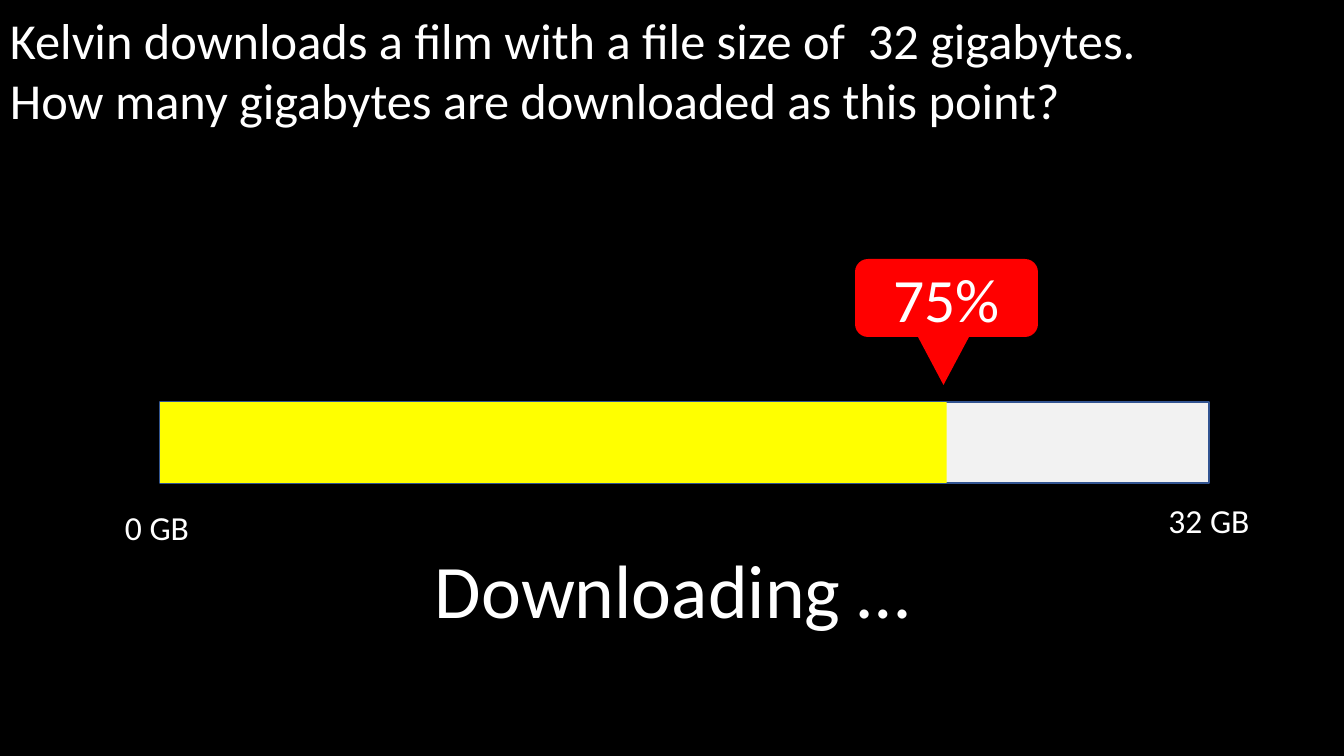
from pptx import Presentation
from pptx.dml.color import RGBColor
from pptx.enum.shapes import MSO_SHAPE as Kind
from pptx.enum.text import MSO_ANCHOR as Anchor, MSO_AUTO_SIZE as Fit, PP_ALIGN as Align
from pptx.util import Emu, Pt

WIDTH, HEIGHT = 1344, 756
SCALE = 12192000 / WIDTH
BLACK, WHITE, RED = "000000", "FFFFFF", "FF0000"
YELLOW, PALE, BLUE = "FFFF00", "F2F2F2", "325491"
SHARE = 0.75


def px(num):
    return Emu(round(num * SCALE))


def paint(fill, code):
    fill.solid()
    fill.fore_color.rgb = RGBColor.from_string(code)


def style(item, form):
    for name, value in form.items():
        setattr(item, name, value)


def write(frame, lines, size, align):
    frame.text = "\n".join(lines)
    for para in frame.paragraphs:
        para.alignment = align
        for run in para.runs:
            style(run.font, {"name": "Calibri", "size": Pt(size)})
            paint(run.font.fill, WHITE)


def block(shapes, kind, box, color, edge=None):
    shape = shapes.add_shape(kind, *map(px, box))
    shape.shadow.inherit = False
    paint(shape.fill, color)
    if edge:
        paint(shape.line.fill, edge)
        shape.line.width = Pt(1)
    else:
        shape.line.fill.background()
    return shape


def label(shapes, box, lines, size, align=Align.CENTER):
    frame = shapes.add_textbox(*map(px, box)).text_frame
    style(frame, {"word_wrap": True, "auto_size": Fit.SHAPE_TO_FIT_TEXT})
    write(frame, lines, size, align)


def marker(shapes):
    group = shapes.add_group_shape().shapes
    badge = block(group, Kind.FLOWCHART_ALTERNATE_PROCESS, (855, 259, 183, 78), RED)
    style(badge.text_frame, {"word_wrap": True, "vertical_anchor": Anchor.MIDDLE})
    write(badge.text_frame, [f"{SHARE:.0%}"], 44, Align.CENTER)
    block(group, Kind.FLOWCHART_MERGE, (918, 337, 51, 48), RED)


def main():
    deck = Presentation()
    style(deck, {"slide_width": px(WIDTH), "slide_height": px(HEIGHT)})
    slide = deck.slides.add_slide(deck.slide_layouts[6])
    paint(slide.background.fill, BLACK)
    shapes = slide.shapes

    # Progress bar, its filled share and the marker above
    left, top, width, height = 160, 402, 1049, 81
    block(shapes, Kind.RECTANGLE, (left, top, width, height), PALE, BLUE)
    block(shapes, Kind.RECTANGLE, (left, top, width * SHARE, height), YELLOW)
    marker(shapes)

    # Status, question and scale ends
    label(shapes, (389, 538, 567, 102), ["Downloading …"], 54)
    label(shapes, (0, 4, WIDTH, 132), [
        "Kelvin downloads a film with a file size of  32 gigabytes.",
        "How many gigabytes are downloaded as this point?",
    ], 36, Align.LEFT)
    label(shapes, (88, 502, 138, 50), ["0 GB"], 24)
    label(shapes, (1140, 495, 138, 50), ["32 GB"], 24)

    deck.save("out.pptx")


if __name__ == "__main__":
    main()
